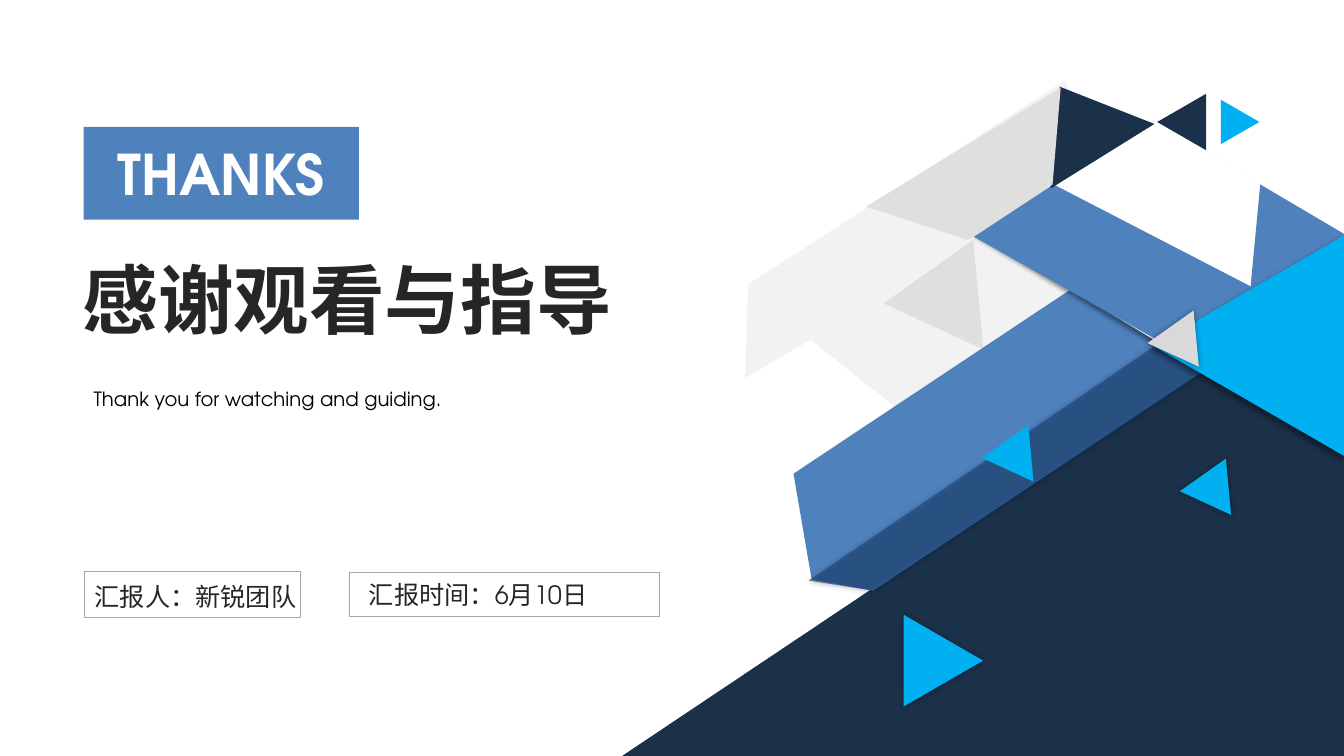
from math import sqrt

from lxml.etree import SubElement
from pptx import Presentation
from pptx.dml.color import RGBColor
from pptx.enum.shapes import MSO_SHAPE
from pptx.enum.text import MSO_ANCHOR, PP_ALIGN
from pptx.oxml.ns import qn
from pptx.util import Inches, Pt

FONT = "TeX Gyre Adventor"
COLORS = {
    "white": "FFFFFF", "black": "000000", "ink": "262626", "outline": "A6A6A6",
    "navy": "1B3049", "deep": "1F497D", "blue": "4F81BD", "cyan": "00B0F0",
    "pale": "F2F2F2", "light": "DFDFDF", "grey": "D9D9D9",
}
# Blur (pt), distance (pt), direction (degrees)
GLOW = (4, 0, 50)
CAST_SOFT = (3, 3, 135)
CAST = (4, 3, 135)


def rgb(name):
    return RGBColor.from_string(COLORS[name])


def set_alpha(color_element, percent):
    SubElement(color_element, qn("a:alpha"), val=str(percent * 1000))


def paint(shape, fill, alpha=100, shadow=None):
    """Give a shape a plain fill, no line and an optional soft shadow."""
    shape.fill.solid()
    shape.fill.fore_color.rgb = rgb(fill)
    shape.line.fill.background()
    shape.shadow.inherit = False
    properties = shape._element.spPr
    if alpha < 100:
        set_alpha(properties.find(qn("a:solidFill"))[0], alpha)
    if shadow:
        blur, distance, direction = shadow
        outer = SubElement(
            properties.find(qn("a:effectLst")), qn("a:outerShdw"),
            blurRad=str(Pt(blur)), dist=str(Pt(distance)),
            dir=str(direction * 60000), algn="ctr", rotWithShape="0")
        set_alpha(SubElement(outer, qn("a:srgbClr"), val=COLORS["black"]), 40)


def write(shape, text, size, color, bold=False, align=PP_ALIGN.LEFT):
    frame = shape.text_frame
    frame.word_wrap = True
    frame.vertical_anchor = MSO_ANCHOR.MIDDLE
    paragraph = frame.paragraphs[0]
    paragraph.alignment = align
    run = paragraph.add_run()
    run.text = text
    run.font.name = FONT
    run.font.size = Pt(size)
    run.font.bold = bold
    run.font.color.rgb = rgb(color)


def add_artwork(slide, left, top, width, height):
    """Layer the folded bands and triangles, from back to front."""

    def band(points, fill, **style):
        corners = [(Inches(left + x), Inches(top + y)) for x, y in points]
        builder = slide.shapes.build_freeform(*corners[0], scale=1.0)
        builder.add_line_segments(corners[1:], close=True)
        paint(builder.convert_to_shape(), fill, **style)

    def triangle(x, y, side, rotation, fill, **style):
        """Equilateral triangle whose frame is centred on x, y."""
        rise = side * sqrt(3) / 2
        shape = slide.shapes.add_shape(
            MSO_SHAPE.ISOSCELES_TRIANGLE,
            Inches(left + x - side / 2), Inches(top + y - rise / 2),
            Inches(side), Inches(rise))
        shape.rotation = rotation
        paint(shape, fill, **style)

    band([(2.97, 4.11), (2.04, 3.37), (1.39, 3.75), (1.42, 2.82),
          (4.56, 0.8), (5.4, 2.49)], "pale")
    triangle(3.48, 3.08, 1.09, 144.7, "grey", alpha=73)

    slope_width, slope_height = 7.16, 4.79
    slope = slide.shapes.add_shape(
        MSO_SHAPE.RIGHT_TRIANGLE,
        Inches(left + width - slope_width), Inches(top + height - slope_height),
        Inches(slope_width), Inches(slope_height))
    slope._element.spPr.xfrm.set("flipH", "1")
    paint(slope, "navy")

    triangle(3.16, 6.44, 0.91, 330, "cyan", shadow=GLOW)
    triangle(6.07, 4.91, 0.56, 144.7, "cyan", shadow=GLOW)
    band([(2.66, 5.86), (2.05, 5.75), (1.87, 4.7), (5.78, 2.1), (6.26, 3.46)],
         "blue")
    band([(2.66, 5.86), (2.02, 5.76), (6.11, 2.99), (6.26, 3.47)],
         "deep", alpha=66, shadow=GLOW)
    triangle(4.11, 4.58, 0.56, 144.7, "cyan")
    band([(3.7, 2.32), (5.48, 1.19), (7.31, 2.33), (5.48, 3.39)],
         "white", shadow=CAST_SOFT)
    band([(5.49, 3.38), (3.66, 2.35), (4.45, 1.83), (6.46, 2.87)], "blue")
    band([(6.4, 2.88), (6.5, 1.83), (7.33, 2.32), (7.33, 2.35)], "blue")
    triangle(6.39, 3.43, 2.2, 270, "cyan", shadow=CAST)
    triangle(5.75, 3.44, 0.56, 144.7, "grey", shadow=GLOW)
    triangle(5.72, 1.21, 0.56, 270, "navy")
    triangle(6.3, 1.21, 0.44, 90, "cyan")
    band([(4.42, 1.87), (4.51, 0.86), (5.45, 1.23)], "navy")
    band([(4.52, 0.87), (4.44, 1.83), (3.6, 2.38), (2.59, 2.05)], "light")


def add_closing_words(slide, left, top):
    """Stack the badge, the headline and its translation."""
    badge = slide.shapes.add_shape(
        MSO_SHAPE.RECTANGLE, Inches(left), Inches(top), Inches(2.73), Inches(0.92))
    paint(badge, "blue")
    write(badge, "THANKS", 40, "white", bold=True, align=PP_ALIGN.CENTER)

    headline = slide.shapes.add_textbox(
        Inches(left - 0.11), Inches(top + 1.19), Inches(6.26), Inches(1.01))
    write(headline, "感谢观看与指导", 54, "ink", bold=True)

    translation = slide.shapes.add_textbox(
        Inches(left), Inches(top + 2.5), Inches(6.57), Inches(0.4))
    write(translation, "Thank you for watching and guiding.", 14, "black")


def add_framed_detail(slide, left, top, width, height, text, text_width,
                      indent, drop):
    """Outline a box and set one line of text over it."""
    detail = slide.shapes.add_textbox(
        Inches(left + indent), Inches(top + drop), Inches(text_width), Inches(0.4))
    write(detail, text, 18, "ink")

    frame = slide.shapes.add_shape(
        MSO_SHAPE.RECTANGLE, Inches(left), Inches(top), Inches(width), Inches(height))
    frame.fill.background()
    frame.line.color.rgb = rgb("outline")
    frame.line.width = Pt(0.5)
    frame.shadow.inherit = False


def main():
    deck = Presentation()
    deck.slide_width = Inches(13.33)
    deck.slide_height = Inches(7.5)
    slide = deck.slides.add_slide(deck.slide_layouts[6])
    add_artwork(slide, 6, 0, 7.33, 7.5)
    add_closing_words(slide, 0.83, 1.26)
    add_framed_detail(slide, 0.84, 5.67, 2.14, 0.45, "汇报人：新锐团队",
                      2.32, 0, 0.05)
    add_framed_detail(slide, 3.47, 5.68, 3.07, 0.44, "汇报时间：6月10日",
                      2.78, 0.09, 0.02)
    deck.save("out.pptx")


if __name__ == "__main__":
    main()
